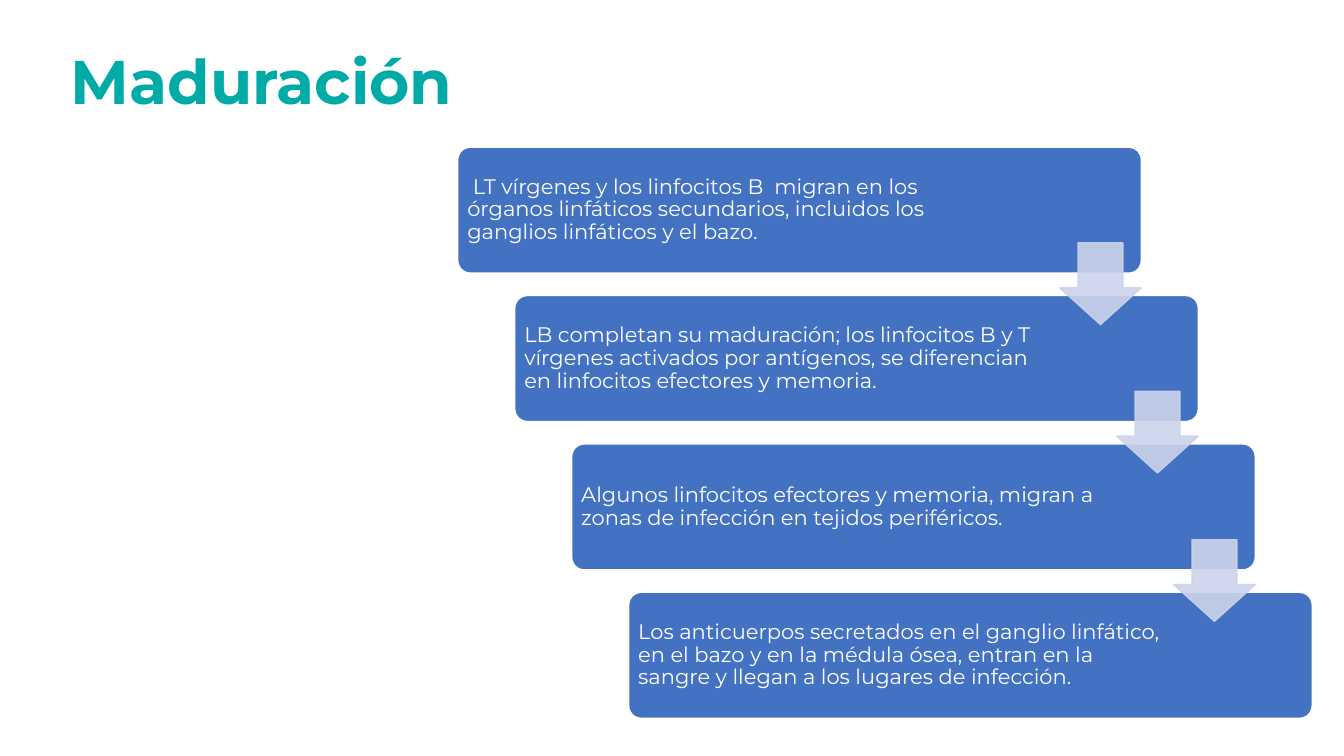
from lxml.etree import SubElement
from pptx import Presentation
from pptx.dml.color import RGBColor
from pptx.enum.shapes import MSO_SHAPE
from pptx.enum.text import MSO_ANCHOR
from pptx.oxml.ns import qn
from pptx.util import Inches, Pt

TEAL = RGBColor(0x00, 0xAA, 0xA7)
BLUE = RGBColor(0x43, 0x72, 0xC3)
PALE = RGBColor(0xCC, 0xD3, 0xEA)
WHITE = RGBColor(0xFF, 0xFF, 0xFF)

# Staircase grid, in inches
LEFT, TOP = 4.54, 1.46
STEP_X, STEP_Y = 0.565, 1.472
WIDE, HIGH = 6.78, 1.25
PAD = 0.035
ARROW = 0.81

STEPS = [
    " LT vírgenes y los linfocitos B  migran en los órganos linfáticos "
    "secundarios, incluidos los ganglios linfáticos y el bazo.",
    "LB completan su maduración; los linfocitos B y T vírgenes activados "
    "por antígenos, se diferencian en linfocitos efectores y memoria.",
    "Algunos linfocitos efectores y memoria, migran a zonas de infección "
    "en tejidos periféricos.",
    "Los anticuerpos secretados en el ganglio linfático, en el bazo y en la "
    "médula ósea, entran en la sangre y llegan a los lugares de infección.",
]

deck = Presentation()
deck.slide_width, deck.slide_height = Inches(13.33), Inches(7.5)
slide = deck.slides.add_slide(deck.slide_layouts[6])


def write(text, at, size, color, bold=False, pad_x=0.06, pad_y=0.06):
    box = slide.shapes.add_textbox(*map(Inches, at))
    frame = box.text_frame
    frame.word_wrap = True
    frame.vertical_anchor = MSO_ANCHOR.MIDDLE
    frame.margin_left = frame.margin_right = Inches(pad_x)
    frame.margin_top = frame.margin_bottom = Inches(pad_y)
    line = frame.paragraphs[0]
    line.line_spacing = 0.9
    run = line.add_run()
    run.text = text
    run.font.name, run.font.size = "Montserrat", Pt(size)
    run.font.bold, run.font.color.rgb = bold, color


def draw(kind, at, fill, edge, adjust):
    shape = slide.shapes.add_shape(kind, *map(Inches, at))
    shape.shadow.inherit = False
    shape.fill.solid()
    shape.fill.fore_color.rgb = fill
    shape.line.color.rgb = edge
    shape.line.width = Pt(1)
    for i, value in enumerate(adjust):
        shape.adjustments[i] = value
    return shape


# Title
write("Maduración", (0.6, 0.11, 11.5, 1.45), 44, TEAL, bold=True,
      pad_x=0.1, pad_y=0.05)

# Steps, each one lower and further right
for i, text in enumerate(STEPS):
    x, y = LEFT + i * STEP_X, TOP + i * STEP_Y
    draw(MSO_SHAPE.ROUNDED_RECTANGLE, (x, y, WIDE, HIGH), BLUE, WHITE, [0.1])
    write(text, (x + PAD, y + PAD, 5.33, HIGH - 2 * PAD), 15, WHITE)

# Translucent arrows between steps, flush with the upper step's right edge
for i in range(len(STEPS) - 1):
    x = LEFT + WIDE - ARROW + i * STEP_X
    y = TOP + 0.95 + i * STEP_Y
    arrow = draw(MSO_SHAPE.DOWN_ARROW, (x, y, ARROW, ARROW), PALE, PALE,
                 [0.55, 0.45])
    for color in arrow.element.spPr.iter(qn("a:srgbClr")):
        SubElement(color, qn("a:alpha"), val="90000")

deck.save("out.pptx")
